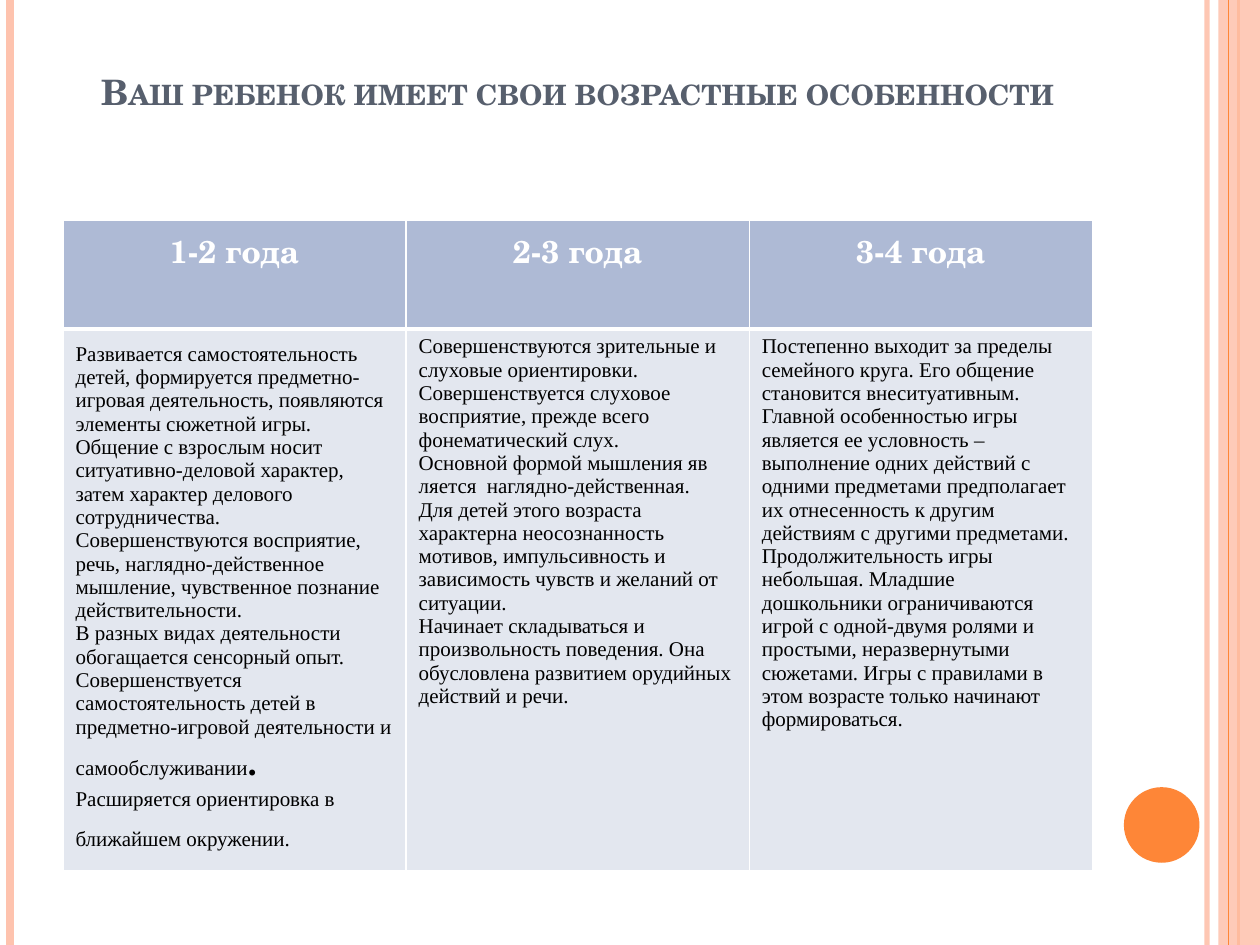
"""Build a slide with a table of children's traits by age."""
from typing import Any, NamedTuple

from lxml import etree
from pptx import Presentation
from pptx.dml.color import RGBColor
from pptx.enum.shapes import MSO_CONNECTOR, MSO_SHAPE
from pptx.enum.text import MSO_ANCHOR, PP_ALIGN
from pptx.oxml.ns import qn
from pptx.util import Inches, Pt

LINE, RECT, OVAL = MSO_CONNECTOR.STRAIGHT, MSO_SHAPE.RECTANGLE, MSO_SHAPE.OVAL
TOP, MIDDLE, BOTTOM = MSO_ANCHOR.TOP, MSO_ANCHOR.MIDDLE, MSO_ANCHOR.BOTTOM
LEFT, CENTER = PP_ALIGN.LEFT, PP_ALIGN.CENTER
WIDE, HIGH = Inches(10), Inches(7.5)
SERIF, ROMAN = "TeX Gyre Schola", "Times New Roman"
COLORS = {
    "peach": "FEC3AE", "orange": "FE8637", "slate": "575F6D",
    "head": "AEBAD5", "body": "E3E7EF", "white": "FFFFFF", "black": "000000",
}


class Stripe(NamedTuple):
    x: float
    weight: float
    color: str
    alpha: int = 100


class Block(NamedTuple):
    kind: Any
    x: float
    y: float
    w: float
    h: float
    color: str
    alpha: int = 100


class Style(NamedTuple):
    face: str
    size: float
    color: str
    bold: bool
    align: Any = LEFT


class Tail(NamedTuple):
    text: str
    bold: bool


class Para(NamedTuple):
    text: str
    tail: Tail | None = None


class Age(NamedTuple):
    name: str
    paras: list[Para]
    anchor: Any = TOP


TITLE = Style(SERIF, 20, "slate", True, CENTER)
HEAD = Style(SERIF, 18, "white", True, CENTER)
BODY = Style(ROMAN, 12, "black", False)

STRIPES = [
    Stripe(0.958, 3, "peach", 93),
    Stripe(0.008, 4.5, "peach"),
    Stripe(0.983, 1.5, "orange"),
]
BAND = Block(RECT, 0.967, 0, 0.033, 1, "peach", 87)
EDGE = Stripe(0.975, 0.75, "orange")
DISC = Block(OVAL, 0.892, 0.833, 0.06, 0.08, "orange")

AGES = [
    Age("1-2 года", [
        Para("Развивается самостоятельность детей, формируется предметно-игровая "
             "деятельность, появляются элементы сюжетной игры. Общение с взрослым "
             "носит ситуативно-деловой характер, затем характер делового "
             "сотрудничества. Совершенствуются восприятие, речь, наглядно-действенное "
             "мышление, чувственное познание действительности."),
        Para("В разных видах деятельности обогащается сенсорный опыт."),
        Para("Совершенствуется самостоятельность детей в предметно-игровой "
             "деятельности и самообслуживании", Tail(".", True)),
        Para("Расширяется ориентировка в ближайшем окружении.", Tail(" ", False)),
    ], MIDDLE),
    Age("2-3 года", [
        Para("Совершенствуются зрительные и слуховые ориентировки."),
        Para("Совершенствуется слуховое восприятие, прежде всего фонематический слух."),
        Para("Основной формой мышления яв"),
        Para("ляется  наглядно-действенная."),
        Para("Для детей этого возраста характерна неосознанность мотивов, "
             "импульсивность и зависимость чувств и желаний от ситуации."),
        Para("Начинает складываться и произвольность поведения. Она обусловлена "
             "развитием орудийных действий и речи."),
    ]),
    Age("3-4 года", [
        Para("Постепенно выходит за пределы семейного круга. Его общение "
             "становится внеситуативным."),
        Para("Главной особенностью игры является ее условность – выполнение одних "
             "действий с одними предметами предполагает их отнесенность к другим "
             "действиям с другими предметами. Продолжительность игры небольшая. "
             "Младшие дошкольники ограничиваются игрой с одной-двумя ролями и "
             "простыми, неразвернутыми сюжетами. Игры с правилами в этом возрасте "
             "только начинают формироваться."),
    ]),
]


def tint(name: str) -> RGBColor:
    return RGBColor.from_string(COLORS[name])


def fade(part: Any, alpha: int) -> None:
    if alpha < 100:
        color = next(part.iter(qn("a:srgbClr")))
        etree.SubElement(color, qn("a:alpha")).set("val", str(alpha * 1000))


def draw_stripe(slide: Any, item: Stripe) -> None:
    x = int(item.x * WIDE)
    line = slide.shapes.add_connector(LINE, x, 0, x, HIGH)
    line.line.width = Pt(item.weight)
    line.line.color.rgb = tint(item.color)
    props = line._element.spPr
    fade(props, item.alpha)
    etree.SubElement(props, qn("a:effectLst"))


def draw_block(slide: Any, item: Block) -> None:
    shape = slide.shapes.add_shape(
        item.kind, int(item.x * WIDE), int(item.y * HIGH),
        int(item.w * WIDE), int(item.h * HIGH))
    shape.shadow.inherit = False
    shape.line.fill.background()
    shape.fill.solid()
    shape.fill.fore_color.rgb = tint(item.color)
    fade(shape._element.spPr, item.alpha)


def write(frame: Any, paras: list[Para], style: Style) -> None:
    for i, item in enumerate(paras):
        para = frame.add_paragraph() if i else frame.paragraphs[0]
        para.alignment = style.align
        font = para.font
        font.name, font.size, font.bold = style.face, Pt(style.size), style.bold
        font.color.rgb = tint(style.color)
        para.add_run().text = item.text
        if item.tail:
            run = para.add_run()
            run.text = item.tail.text
            run.font.name, run.font.size = SERIF, Pt(18)
            run.font.bold = item.tail.bold


def fill_cell(cell: Any, paras: list[Para], style: Style, color: str,
              anchor: Any, top: float, base: float) -> None:
    write(cell.text_frame, paras, style)
    cell.vertical_anchor = anchor
    props = cell._tc.get_or_add_tcPr()
    for side, weight in zip("LRTB", (1, 1, top, base)):
        edge = etree.SubElement(props, qn(f"a:ln{side}"), w=str(Pt(weight)))
        paint = etree.SubElement(edge, qn("a:solidFill"))
        etree.SubElement(paint, qn("a:srgbClr"), val=COLORS["white"])
    cell.fill.solid()
    cell.fill.fore_color.rgb = tint(color)


def draw_title(slide: Any, text: str) -> None:
    box = slide.shapes.add_textbox(
        int(0.05 * WIDE), int(0.04 * HIGH), Inches(8.17), Inches(0.64))
    frame = box.text_frame
    frame.word_wrap, frame.vertical_anchor = True, BOTTOM
    write(frame, [Para(text)], TITLE)
    frame.paragraphs[0].runs[0]._r.get_or_add_rPr().set("cap", "small")


def draw_table(slide: Any, ages: list[Age]) -> None:
    rows = Inches(0.86), Inches(3.41)
    table = slide.shapes.add_table(
        2, len(ages), int(0.05 * WIDE), Inches(1.75), Inches(8.17), sum(rows)).table
    for row, high in zip(table.rows, rows):
        row.height = high
    for col, age in enumerate(ages):
        fill_cell(table.cell(0, col), [Para(age.name)], HEAD, "head", TOP, 1, 3)
        fill_cell(table.cell(1, col), age.paras, BODY, "body", age.anchor, 3, 1)


def main() -> None:
    deck = Presentation()
    deck.slide_width, deck.slide_height = WIDE, HIGH
    slide = deck.slides.add_slide(deck.slide_layouts[6])
    for item in STRIPES:
        draw_stripe(slide, item)
    draw_block(slide, BAND)
    draw_stripe(slide, EDGE)
    draw_block(slide, DISC)
    draw_title(slide, "Ваш ребенок имеет свои возрастные особенности")
    draw_table(slide, AGES)
    deck.save("out.pptx")


if __name__ == "__main__":
    main()
